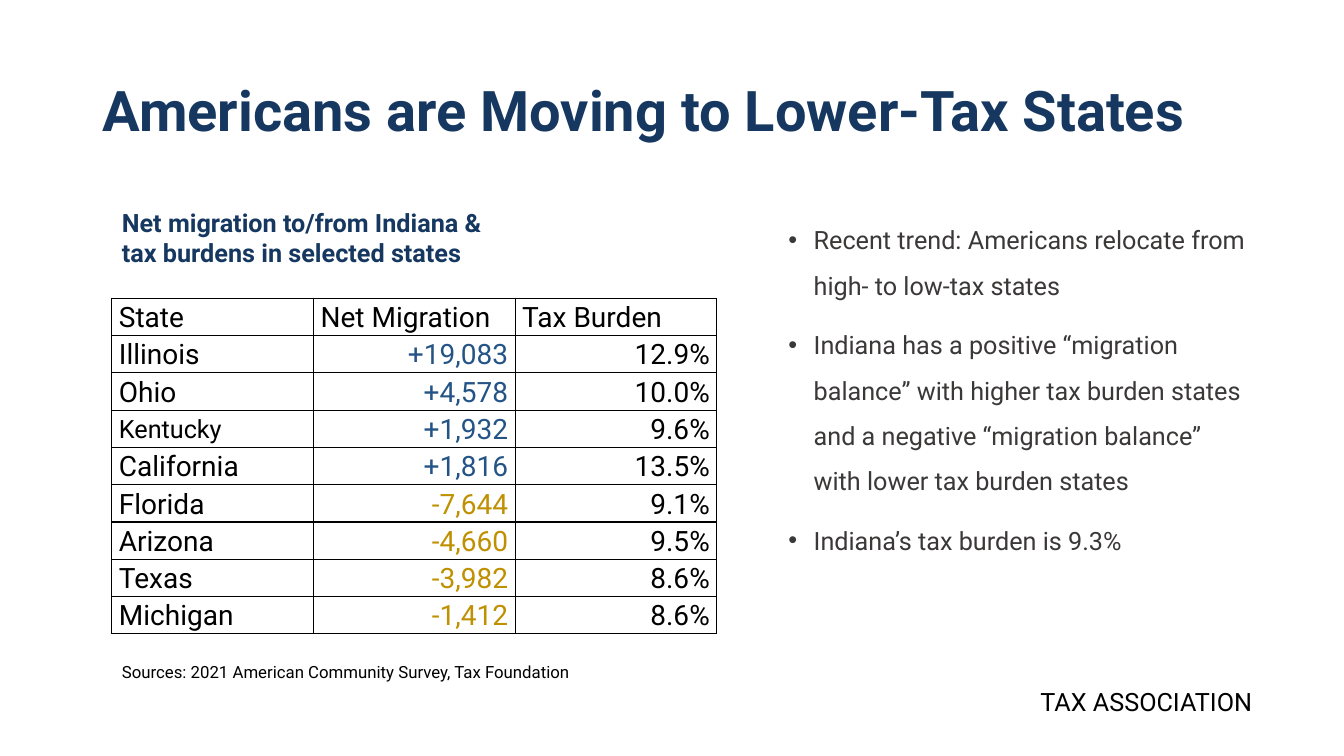
from typing import NamedTuple

from lxml.etree import SubElement
from pptx import Presentation
from pptx.dml.color import RGBColor
from pptx.enum.text import MSO_ANCHOR, MSO_AUTO_SIZE, PP_ALIGN
from pptx.oxml.ns import qn
from pptx.util import Emu, Pt

PX = 9144  # EMU per px, 100 px to the inch
FONT = "Roboto"
NAVY = RGBColor(0x16, 0x38, 0x60)
BLUE = RGBColor(0x23, 0x54, 0x85)
GOLD = RGBColor(0xBF, 0x90, 0x00)
GRAY = RGBColor(0x3B, 0x38, 0x38)
BLACK = RGBColor(0, 0, 0)


class Box(NamedTuple):
    left: int
    top: int
    width: int
    height: int

    def emu(self) -> list[Emu]:
        return [px(v) for v in self]


class StateRow(NamedTuple):
    state: str
    migration: str
    burden: str
    name_size: int = 20


class Label(NamedTuple):
    box: Box
    text: str
    size: int
    color: RGBColor = BLACK
    bold: bool = False
    align: PP_ALIGN = PP_ALIGN.LEFT
    wrap: bool = False
    side_inset: int = 10


HEADER = StateRow("State", "Net Migration", "Tax Burden")
STATES = [
    StateRow("Illinois", "+19,083", "12.9%"),
    StateRow("Ohio", "+4,578", "10.0%"),
    StateRow("Kentucky", "+1,932", "9.6%", 18),
    StateRow("California", "+1,816", "13.5%"),
    StateRow("Florida", "-7,644", "9.1%"),
    StateRow("Arizona", "-4,660", "9.5%"),
    StateRow("Texas", "-3,982", "8.6%"),
    StateRow("Michigan", "-1,412", "8.6%"),
]
POINTS = [
    "Recent trend: Americans relocate from high- to low-tax states",
    "Indiana has a positive “migration balance” with higher tax burden states "
    "and a negative “migration balance” with lower tax burden states",
    "Indiana’s tax burden is 9.3%",
]
LABELS = [
    Label(Box(111, 201, 388, 71),
          "Net migration to/from Indiana &\vtax burdens in selected states",
          18, NAVY, bold=True),
    Label(Box(111, 652, 471, 30),
          "Sources: 2021 American Community Survey, Tax Foundation", 12),
    Label(Box(957, 676, 285, 40), "TAX ASSOCIATION", 18,
          align=PP_ALIGN.RIGHT, wrap=True, side_inset=0),
]


def px(value: int) -> Emu:
    return Emu(value * PX)


def write(p, text: str, *, size: int, color: RGBColor = BLACK, bold: bool = False,
          align: PP_ALIGN = PP_ALIGN.LEFT, spacing: float = 1.0, before: int = 0) -> None:
    p.text = text
    p.alignment = align
    p.line_spacing = spacing
    p.space_before = Pt(before)
    for r in p.runs:
        r.font.name = FONT
        r.font.size = Pt(size)
        r.font.bold = bold
        r.font.color.rgb = color


def place(sp, box: Box) -> None:
    sp.left, sp.top, sp.width, sp.height = box.emu()
    sp.text_frame.auto_size = MSO_AUTO_SIZE.NONE


def add_bullet(p) -> None:
    pPr = p._p.get_or_add_pPr()
    pPr.set("marL", str(px(25)))
    pPr.set("indent", str(px(-25)))
    SubElement(pPr, qn("a:buFont"), typeface="Arial")
    SubElement(pPr, qn("a:buChar"), char="•")


def add_borders(cell) -> None:
    tcPr = cell._tc.get_or_add_tcPr()
    for side in ("lnL", "lnR", "lnT", "lnB"):
        ln = SubElement(tcPr, qn(f"a:{side}"), w=str(Pt(1)))
        fill = SubElement(ln, qn("a:solidFill"))
        SubElement(fill, qn("a:srgbClr"), val=str(BLACK))


def add_label(s, label: Label) -> None:
    tf = s.shapes.add_textbox(*label.box.emu()).text_frame
    tf.word_wrap = label.wrap
    tf.margin_left = tf.margin_right = px(label.side_inset)
    write(tf.paragraphs[0], label.text, size=label.size, color=label.color,
          bold=label.bold, align=label.align)


def add_state_table(s, box: Box) -> None:
    rows = [HEADER, *STATES]
    table = s.shapes.add_table(len(rows), 3, *box.emu()).table
    table.first_row = table.horz_banding = False
    for i, row in enumerate(rows):
        migration_color = GOLD if row.migration.startswith("-") else BLUE
        for j, text in enumerate((row.state, row.migration, row.burden)):
            cell = table.cell(i, j)
            add_borders(cell)
            cell.fill.background()
            cell.vertical_anchor = MSO_ANCHOR.MIDDLE
            cell.margin_left = cell.margin_right = px(7)
            cell.margin_top = cell.margin_bottom = 0
            is_value = i > 0 and j > 0
            write(cell.text_frame.paragraphs[0], text,
                  size=row.name_size if j == 0 else 20,
                  color=migration_color if is_value and j == 1 else BLACK,
                  align=PP_ALIGN.RIGHT if is_value else PP_ALIGN.LEFT,
                  spacing=1.07)


def main() -> None:
    prs = Presentation()
    prs.slide_width, prs.slide_height = px(1333), px(750)
    s = prs.slides.add_slide(prs.slide_layouts[1])

    # Title
    title = s.shapes.title
    place(title, Box(92, 40, 1176, 145))
    title.text_frame.vertical_anchor = MSO_ANCHOR.MIDDLE
    write(title.text_frame.paragraphs[0], "Americans are Moving to Lower-Tax States",
          size=40, color=NAVY, bold=True, spacing=0.9)

    # Bulleted findings
    body = s.placeholders[1]
    place(body, Box(772, 203, 474, 416))
    tf = body.text_frame
    for i, point in enumerate(POINTS):
        p = tf.add_paragraph() if i else tf.paragraphs[0]
        add_bullet(p)
        write(p, point, size=18, color=GRAY, spacing=1.5, before=10 if i else 0)

    # Migration table, its heading and source, and the footer
    add_state_table(s, Box(111, 296, 600, 333))
    for label in LABELS:
        add_label(s, label)

    prs.save("out.pptx")


if __name__ == "__main__":
    main()
